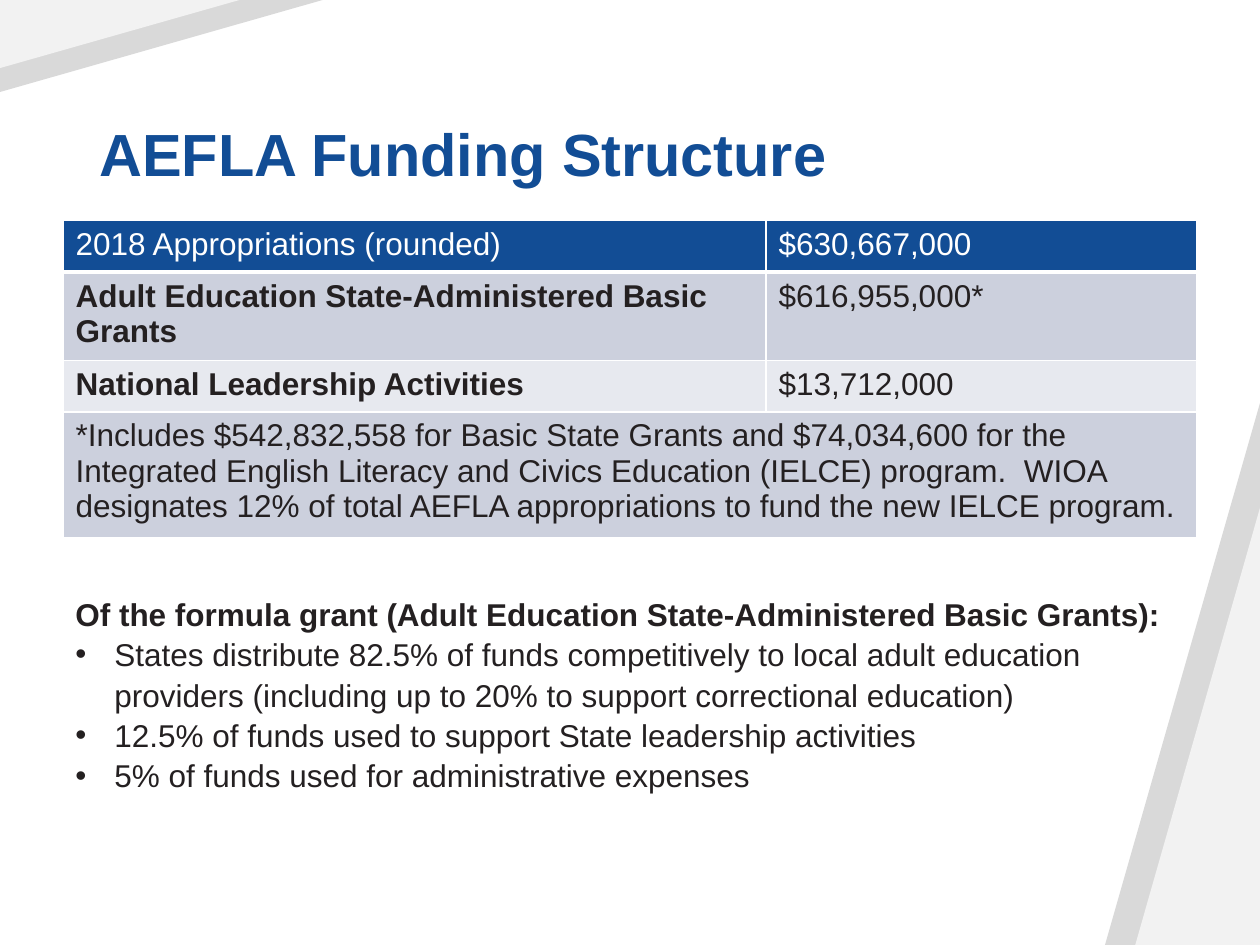
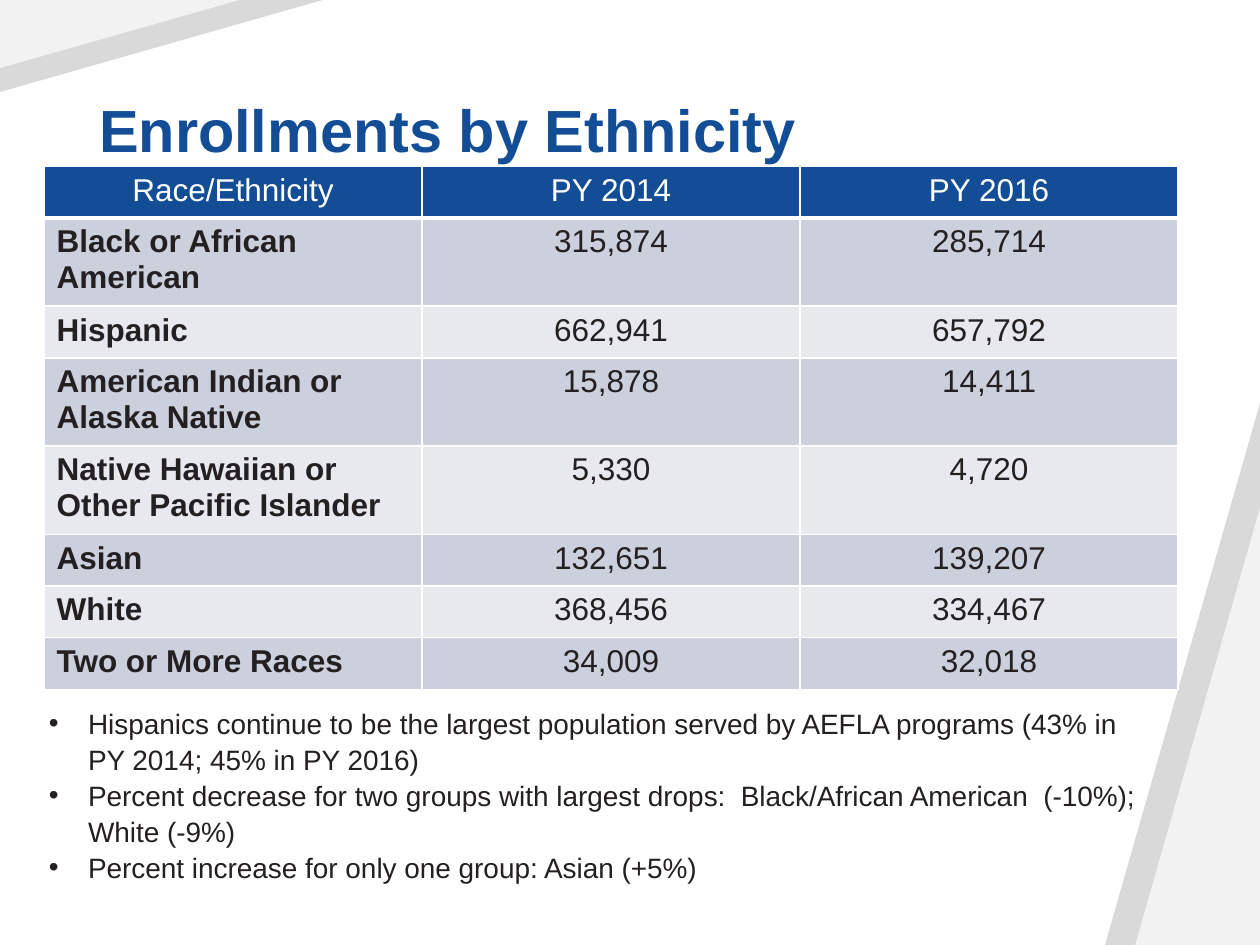
from lxml import etree
from pptx import Presentation
from pptx.dml.color import RGBColor
from pptx.enum.shapes import MSO_SHAPE
from pptx.enum.text import MSO_ANCHOR, PP_ALIGN
from pptx.oxml.ns import qn
from pptx.util import Pt

TRIANGLE = MSO_SHAPE.ISOSCELES_TRIANGLE
BOTTOM = MSO_ANCHOR.BOTTOM
LEFT, CENTER = PP_ALIGN.LEFT, PP_ALIGN.CENTER

PX = 9144  # 100 px to the inch
SLIDE_W, SLIDE_H = 1000, 750
ROW_H = 41
BULLET_INDENT = 31
FONT = "Arial"
COLORS = {
    "blue": "124D95",
    "ink": "242021",
    "white": "FFFFFF",
    "band_dark": "CCD0DD",
    "band_light": "E7E9EF",
    "ray_dark": "D9D9D9",
    "ray_light": "F2F2F2",
}


def px(*lengths):
    return [length * PX for length in lengths]


def rgb(name):
    return RGBColor.from_string(COLORS[name])


def add_run(paragraph, text, size, color="ink", bold=False):
    run = paragraph.add_run()
    run.text = text
    run.font.name = FONT
    run.font.size = Pt(size)
    run.font.bold = bold
    run.font.color.rgb = rgb(color)


def add_text_frame(slide, box):
    frame = slide.shapes.add_textbox(*px(*box)).text_frame
    frame.word_wrap = True
    return frame


# Grey rays in two opposite corners
def add_ray(slide, box, color, rotation):
    ray = slide.shapes.add_shape(TRIANGLE, *px(*box))
    ray.adjustments[0] = 1
    ray.rotation = rotation
    ray.shadow.inherit = False
    ray.fill.solid()
    ray.fill.fore_color.rgb = rgb(color)
    ray.line.fill.background()


def add_corner_rays(slide):
    for width, height, color in ((123, 430, "ray_dark"), (99, 347, "ray_light")):
        add_ray(slide, (SLIDE_W - width, SLIDE_H - height, width, height), color, 0)
    for width, height, color in ((256, 73, "ray_dark"), (190, 54, "ray_light")):
        add_ray(slide, (0, 0, width, height), color, 180)


def add_title(slide, box, title):
    frame = add_text_frame(slide, box)
    frame.vertical_anchor = BOTTOM
    frame.paragraphs[0].line_spacing = 0.9
    add_run(frame.paragraphs[0], title, 34, "blue", bold=True)


# Tables with a blue header and alternating bands
def set_borders(cell, is_header):
    properties = cell._tc.get_or_add_tcPr()
    for index, side in enumerate("LRTB"):
        points = 3 if is_header and side == "B" else 1
        line = etree.Element(qn(f"a:ln{side}"), w=str(Pt(points)))
        fill = etree.SubElement(line, qn("a:solidFill"))
        etree.SubElement(fill, qn("a:srgbClr"), val=COLORS["white"])
        properties.insert(index, line)


def add_banded_table(slide, left, top, widths, rows, figures_align, header_align):
    box = px(left, top, sum(widths), ROW_H * len(rows))
    table = slide.shapes.add_table(len(rows), len(widths), *box).table
    for column, width in zip(table.columns, widths):
        column.width = width * PX
    for r, texts in enumerate(rows):
        is_header = r == 0
        band = "blue" if is_header else "band_dark" if r % 2 else "band_light"
        is_note = len(texts) == 1
        if is_note:
            table.cell(r, 0).merge(table.cell(r, len(widths) - 1))
        for c in range(len(widths)):
            cell = table.cell(r, c)
            cell.fill.solid()
            cell.fill.fore_color.rgb = rgb(band)
            set_borders(cell, is_header)
            if c >= len(texts):
                continue
            is_label = c == 0 and not is_header and not is_note
            paragraph = cell.text_frame.paragraphs[0]
            if is_header:
                paragraph.alignment = header_align
            else:
                paragraph.alignment = figures_align if c else LEFT
            add_run(paragraph, texts[c], 18,
                    "white" if is_header else "ink", bold=is_label)


# Notes below the table: an optional bold lead, then bullets
def add_bullet(paragraph):
    properties = paragraph._p.get_or_add_pPr()
    properties.set("marL", str(BULLET_INDENT * PX))
    properties.set("indent", str(-BULLET_INDENT * PX))
    etree.SubElement(properties, qn("a:buFont"), typeface=FONT)
    etree.SubElement(properties, qn("a:buChar"), char="•")


def add_notes(slide, box, size, points, lead=None):
    frame = add_text_frame(slide, box)
    lines = ([lead] if lead else []) + points
    for i, text in enumerate(lines):
        paragraph = frame.add_paragraph() if i else frame.paragraphs[0]
        paragraph.line_spacing = 1.07
        is_lead = text == lead
        if not is_lead:
            add_bullet(paragraph)
        add_run(paragraph, text, size, bold=is_lead)


def add_base_slide(prs, title, title_box):
    slide = prs.slides.add_slide(prs.slide_layouts[6])
    add_corner_rays(slide)
    add_title(slide, title_box, title)
    return slide


def build_funding(prs):
    slide = add_base_slide(prs, "AEFLA Funding Structure", (69, 40, 870, 115))
    appropriations = [
        ("2018 Appropriations (rounded)", "$630,667,000"),
        ("Adult Education State-Administered Basic Grants", "$616,955,000*"),
        ("National Leadership Activities", "$13,712,000"),
        ("*Includes $542,832,558 for Basic State Grants and $74,034,600 for the "
         "Integrated English Literacy and Civics Education (IELCE) program.  WIOA "
         "designates 12% of total AEFLA appropriations to fund the new IELCE program.",),
    ]
    add_banded_table(slide, 50, 175, (558, 342), appropriations, LEFT, LEFT)
    add_notes(slide, (50, 465, 900, 162), 18, [
        "States distribute 82.5% of funds competitively to local adult education "
        "providers (including up to 20% to support correctional education)",
        "12.5% of funds used to support State leadership activities",
        "5% of funds used for administrative expenses",
    ], lead="Of the formula grant (Adult Education State-Administered Basic Grants):")


def build_enrollments(prs):
    slide = add_base_slide(prs, "Enrollments by Ethnicity", (69, 70, 870, 66))
    enrollments = [
        ("Race/Ethnicity", "PY 2014", "PY 2016"),
        ("Black or African American", "315,874", "285,714"),
        ("Hispanic", "662,941", "657,792"),
        ("American Indian or Alaska Native", "15,878", "14,411"),
        ("Native Hawaiian or Other Pacific Islander", "5,330", "4,720"),
        ("Asian", "132,651", "139,207"),
        ("White", "368,456", "334,467"),
        ("Two or More Races", "34,009", "32,018"),
    ]
    add_banded_table(slide, 35, 132, (300, 300, 300), enrollments, CENTER, CENTER)
    add_notes(slide, (29, 554, 889, 145), 16, [
        "Hispanics continue to be the largest population served by AEFLA programs "
        "(43% in PY 2014; 45% in PY 2016)",
        "Percent decrease for two groups with largest drops:  "
        "Black/African American  (-10%); White (-9%)",
        "Percent increase for only one group: Asian (+5%)",
    ])


def main():
    prs = Presentation()
    prs.slide_width, prs.slide_height = px(SLIDE_W, SLIDE_H)
    build_funding(prs)
    build_enrollments(prs)
    prs.save("out.pptx")


if __name__ == "__main__":
    main()
